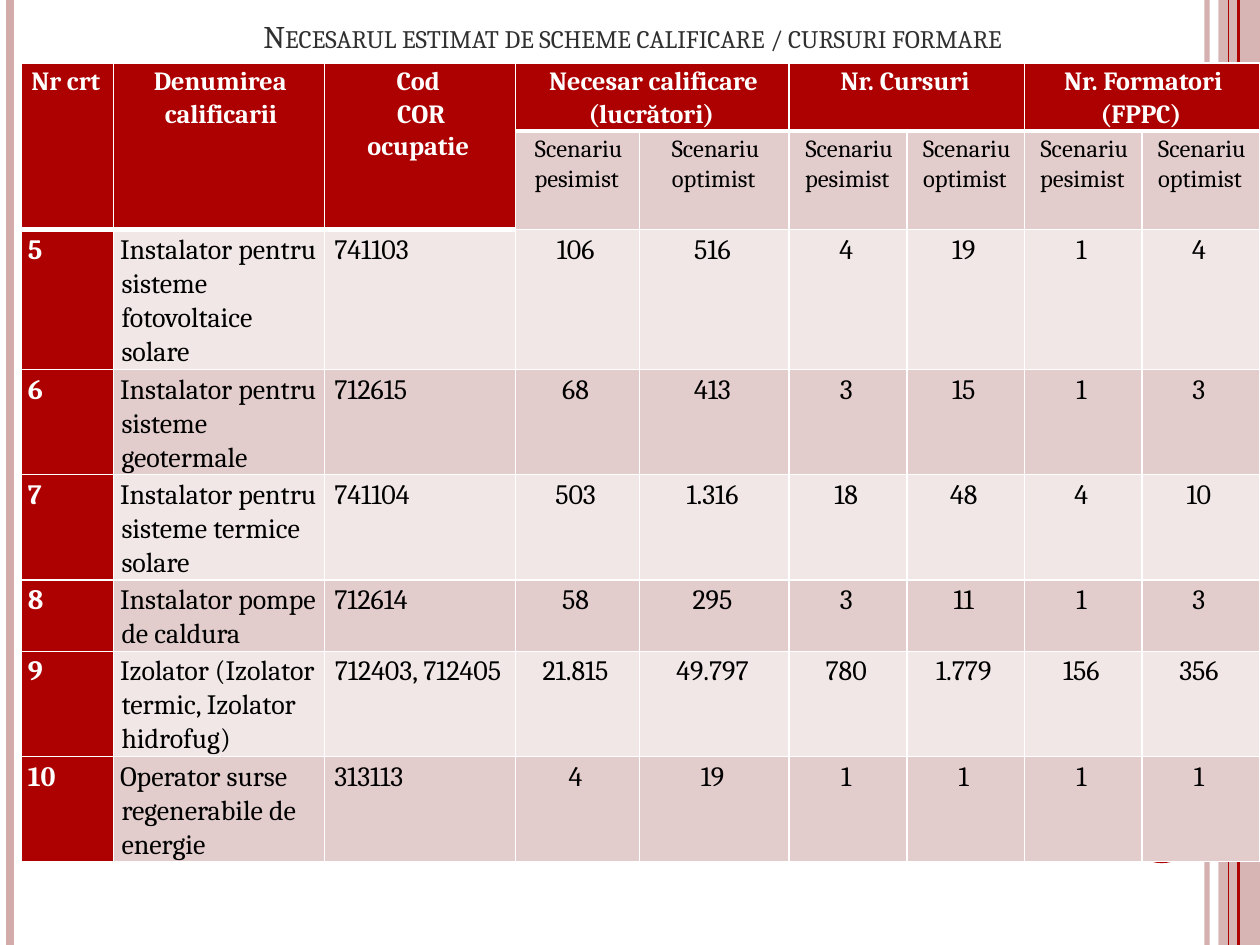
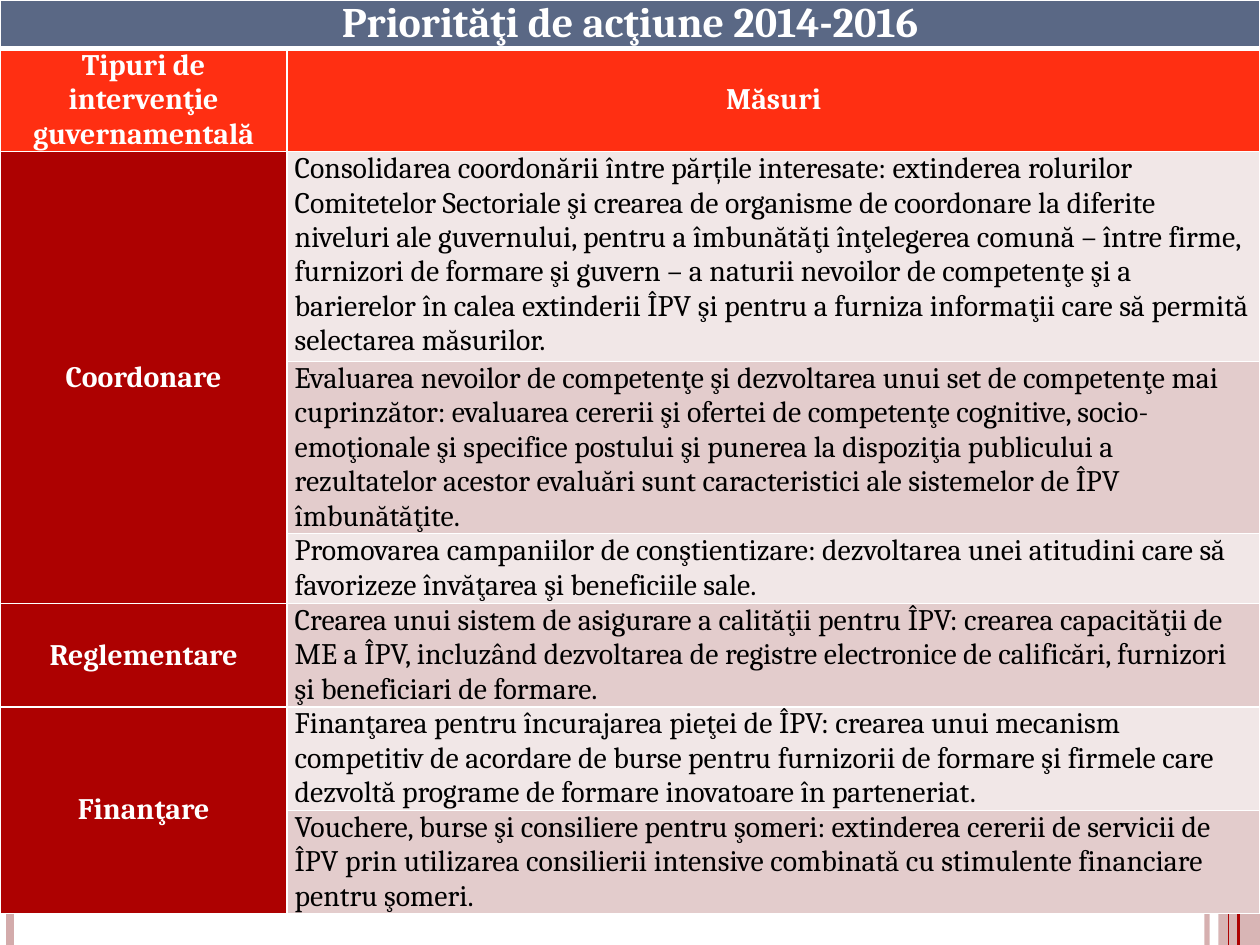
"""Build two slides on training needs and action priorities, each with a table."""
from dataclasses import dataclass, replace

import lxml.etree
import pptx
import pptx.dml.color
import pptx.enum.shapes
import pptx.enum.text
import pptx.oxml
import pptx.oxml.ns
import pptx.slide
import pptx.table
import pptx.util

Cm = pptx.util.Cm
Pt = pptx.util.Pt
qn = pptx.oxml.ns.qn
Align = pptx.enum.text.PP_ALIGN
Anchor = pptx.enum.text.MSO_ANCHOR

FONT = "Cambria"
WIDTH, HEIGHT = 25.4, 19.05
COLOURS = {
    "red": "AD0101",
    "rose": "D3ABAB",
    "band_light": "F1E7E7",
    "band_dark": "E3CCCC",
    "orange": "FF2F12",
    "slate": "5A6885",
    "white": "FFFFFF",
    "black": "000000",
    "title": "303030",
}


@dataclass(frozen=True)
class Stripe:
    x: float
    colour: str
    weight: float
    opacity: int = 100


@dataclass(frozen=True)
class CellStyle:
    fill: str
    colour: str = "black"
    size: float = 16
    bold: bool = False
    align: Align = Align.LEFT
    anchor: Anchor = Anchor.TOP
    indent: float | None = None
    line_spacing: float | None = None


@dataclass(frozen=True)
class CellItem:
    row: int
    column: int
    text: str
    style: CellStyle
    rows: int = 1
    columns: int = 1


@dataclass(frozen=True)
class TableFrame:
    left: float
    top: float
    widths: list[float]
    heights: list[float]
    margins: tuple[float, float, float]
    header_depths: list[int]


STRIPES = [
    Stripe(24.33, "rose", 3, 93),
    Stripe(0.21, "rose", 4.5),
    Stripe(24.97, "red", 1.5),
    Stripe(24.77, "red", 0.75),
]

NEEDS_FRAME = TableFrame(
    0.43, 1.27,
    [1.86, 4.25, 3.85, 2.5, 3.02] + [2.37] * 4,
    [1.37, 1.98, 2.82, 2.12, 2.12, 1.44, 2.12, 2.12],
    (0.13, 0.05, 0.08),
    [2] * 3 + [1] * 6,
)
NEEDS_HEADERS = [
    (0, "Nr crt ", 2, 1),
    (1, "Denumirea calificarii", 2, 1),
    (2, "Cod \nCOR\nocupatie ", 2, 1),
    (3, "Necesar calificare (lucrători) ", 1, 2),
    (5, "Nr. Cursuri ", 1, 2),
    (7, "Nr. Formatori (FPPC) ", 1, 2),
]
NEEDS = [
    ("5", "Instalator pentru sisteme fotovoltaice solare", "741103",
     "106", "516", "4", "19", "1", "4"),
    ("6", "Instalator pentru sisteme geotermale", "712615",
     "68", "413", "3", "15", "1", "3"),
    ("7", "Instalator pentru sisteme termice solare", "741104",
     "503", "1.316", "18", "48", "4", "10"),
    ("8", "Instalator pompe de caldura", "712614",
     "58", "295", "3", "11", "1", "3"),
    ("9", "Izolator (Izolator termic, Izolator hidrofug)", "712403, 712405 ",
     "21.815", "49.797", "780", "1.779", "156", "356"),
    ("10", "Operator surse regenerabile de energie", "313113",
     "4", "19", "1", "1", "1", "1"),
]

PRIORITIES_FRAME = TableFrame(
    0, 0,
    [5.79, 19.61],
    [0.97, 2.08, 4.23, 3.47, 1.41, 2.08, 2.08, 2.08],
    (0.15, 0, 0.15),
    [1, 1],
)
PRIORITIES = [
    ("Coordonare", [
        "Consolidarea coordonării între părțile interesate: extinderea rolurilor "
        "Comitetelor Sectoriale şi crearea de organisme de coordonare la diferite "
        "niveluri ale guvernului, pentru a îmbunătăţi înţelegerea comună – între firme, "
        "furnizori de formare şi guvern – a naturii nevoilor de competenţe şi a "
        "barierelor în calea extinderii ÎPV şi pentru a furniza informaţii care să "
        "permită selectarea măsurilor.",
        "Evaluarea nevoilor de competenţe şi dezvoltarea unui set de competenţe mai "
        "cuprinzător: evaluarea cererii şi ofertei de competenţe cognitive, "
        "socio-emoţionale şi specifice postului şi punerea la dispoziţia publicului a "
        "rezultatelor acestor evaluări sunt caracteristici ale sistemelor de ÎPV "
        "îmbunătăţite.",
        "Promovarea campaniilor de conştientizare: dezvoltarea unei atitudini care să "
        "favorizeze învăţarea şi beneficiile sale.",
    ]),
    ("Reglementare", [
        "Crearea unui sistem de asigurare a calităţii pentru ÎPV: crearea capacităţii de "
        "ME a ÎPV, incluzând dezvoltarea de registre electronice de calificări, furnizori "
        "şi beneficiari de formare.",
    ]),
    ("Finanţare", [
        "Finanţarea pentru încurajarea pieţei de ÎPV: crearea unui mecanism competitiv de "
        "acordare de burse pentru furnizorii de formare şi firmele care dezvoltă programe "
        "de formare inovatoare în parteneriat.",
        "Vouchere, burse şi consiliere pentru şomeri: extinderea cererii de servicii de "
        "ÎPV prin utilizarea consilierii intensive combinată cu stimulente financiare "
        "pentru şomeri.",
    ]),
]


def rgb(name: str) -> pptx.dml.color.RGBColor:
    return pptx.dml.color.RGBColor.from_string(COLOURS[name])


def set_opacity(element: lxml.etree._Element, percent: int) -> None:
    colour = next(element.iter(qn("a:srgbClr")))
    lxml.etree.SubElement(colour, qn("a:alpha"), val=str(percent * 1000))


def style_font(font: pptx.text.text.Font, size: float, colour: str, bold: bool) -> None:
    font.name = FONT
    font.size = Pt(size)
    font.bold = bold
    font.color.rgb = rgb(colour)


def draw_stripe(slide: pptx.slide.Slide, stripe: Stripe) -> None:
    connector = slide.shapes.add_connector(
        pptx.enum.shapes.MSO_CONNECTOR.STRAIGHT,
        Cm(stripe.x), Cm(0), Cm(stripe.x), Cm(HEIGHT))
    connector.line.color.rgb = rgb(stripe.colour)
    connector.line.width = Pt(stripe.weight)
    properties = connector._element.spPr
    if stripe.opacity < 100:
        set_opacity(properties, stripe.opacity)
    lxml.etree.SubElement(properties, qn("a:effectLst"))


def draw_block(slide: pptx.slide.Slide, kind: pptx.enum.shapes.MSO_SHAPE,
               box: tuple[float, float, float, float], colour: str,
               opacity: int = 100) -> None:
    shape = slide.shapes.add_shape(kind, *map(Cm, box))
    shape.shadow.inherit = False
    shape.fill.solid()
    shape.fill.fore_color.rgb = rgb(colour)
    shape.line.fill.background()
    if opacity < 100:
        set_opacity(shape._element.spPr, opacity)


def draw_side_bands(slide: pptx.slide.Slide) -> None:
    kinds = pptx.enum.shapes.MSO_SHAPE
    draw_block(slide, kinds.RECTANGLE, (24.56, 0, 0.84, HEIGHT), "rose", 87)
    for stripe in STRIPES:
        draw_stripe(slide, stripe)
    draw_block(slide, kinds.OVAL, (22.66, 15.88, 1.52, 1.52), "red")


def set_title(slide: pptx.slide.Slide, text: str) -> None:
    title = slide.shapes.title
    title.left, title.top, title.width, title.height = map(Cm, (1.06, 0.1, 23.5, 1.14))
    frame = title.text_frame
    frame.text = text
    frame.auto_size = pptx.enum.text.MSO_AUTO_SIZE.NONE
    frame.vertical_anchor = Anchor.BOTTOM
    paragraph = frame.paragraphs[0]
    paragraph.alignment = Align.CENTER
    for run in paragraph.runs:
        style_font(run.font, 18, "title", False)
        run.font._element.set("cap", "small")


def set_borders(cell: pptx.table._Cell, top: float, bottom: float) -> None:
    properties = cell._tc.get_or_add_tcPr()
    weights = {"a:lnL": 1, "a:lnR": 1, "a:lnT": top, "a:lnB": bottom}
    for index, (tag, weight) in enumerate(weights.items()):
        line = lxml.etree.Element(qn(tag), w=str(Pt(weight)))
        fill = lxml.etree.SubElement(line, qn("a:solidFill"))
        lxml.etree.SubElement(fill, qn("a:srgbClr"), val=COLOURS["white"])
        properties.insert(index, line)


def fill_cell(cell: pptx.table._Cell, text: str, style: CellStyle) -> None:
    cell.fill.solid()
    cell.fill.fore_color.rgb = rgb(style.fill)
    cell.vertical_anchor = style.anchor
    cell.text_frame.text = text
    for paragraph in cell.text_frame.paragraphs:
        paragraph.alignment = style.align
        if style.line_spacing:
            paragraph.line_spacing = style.line_spacing
        if style.indent is not None:
            properties = paragraph._p.get_or_add_pPr()
            properties.set("marL", str(Cm(style.indent)))
            properties.set("indent", str(Cm(-0.03)))
        for run in paragraph.runs:
            style_font(run.font, style.size, style.colour, style.bold)


def draw_table(slide: pptx.slide.Slide, frame: TableFrame, items: list[CellItem]) -> None:
    table = slide.shapes.add_table(
        len(frame.heights), len(frame.widths), Cm(frame.left), Cm(frame.top),
        Cm(sum(frame.widths)), Cm(sum(frame.heights))).table
    for column, width in zip(table.columns, frame.widths):
        column.width = Cm(width)
    for row, height in zip(table.rows, frame.heights):
        row.height = Cm(height)
    for row in range(len(frame.heights)):
        for column, depth in enumerate(frame.header_depths):
            cell = table.cell(row, column)
            cell.margin_left, cell.margin_top, cell.margin_right = map(Cm, frame.margins)
            cell.margin_bottom = Cm(0)
            set_borders(cell, 3 if row == depth else 1, 3 if row < depth else 1)
    for item in items:
        cell = table.cell(item.row, item.column)
        if item.rows * item.columns > 1:
            cell.merge(table.cell(item.row + item.rows - 1, item.column + item.columns - 1))
        fill_cell(cell, item.text, item.style)


def band(index: int) -> str:
    return "band_dark" if index % 2 else "band_light"


def needs_items() -> list[CellItem]:
    header = CellStyle("red", "white", 15, True, Align.CENTER, indent=0.03, line_spacing=1.06)
    scenario = replace(header, fill="band_dark", colour="black", size=14, bold=False)
    items = [CellItem(0, column, text, header, rows, columns)
             for column, text, rows, columns in NEEDS_HEADERS]
    items += [CellItem(1, column, f"Scenariu {'pesimist' if column % 2 else 'optimist'} ", scenario)
              for column in range(3, 9)]
    for index, (number, name, code, *values) in enumerate(NEEDS):
        row = index + 2
        left = CellStyle(band(index), indent=0.03, line_spacing=1.06)
        centred = replace(left, align=Align.CENTER)
        code_style = centred if "," in code else replace(left, indent=0.1)
        items += [
            CellItem(row, 0, number,
                     replace(left, fill="red", colour="white", bold=True, indent=0)),
            CellItem(row, 1, name, left),
            CellItem(row, 2, code, code_style),
        ]
        items += [CellItem(row, column, f"{value} ", centred)
                  for column, value in enumerate(values, 3)]
    return items


def priorities_items() -> list[CellItem]:
    banner = CellStyle("slate", "white", 24, True, Align.CENTER)
    header = replace(banner, fill="orange", size=17)
    group = replace(header, fill="red", anchor=Anchor.MIDDLE)
    items = [
        CellItem(0, 0, "Priorităţi de acţiune 2014-2016", banner, columns=2),
        CellItem(1, 0, "Tipuri de intervenţie guvernamentală", header),
        CellItem(1, 1, "Măsuri", replace(header, anchor=Anchor.MIDDLE)),
    ]
    row = 2
    for name, measures in PRIORITIES:
        items.append(CellItem(row, 0, name, group, rows=len(measures)))
        for measure in measures:
            items.append(CellItem(row, 1, measure, CellStyle(band(row), size=17)))
            row += 1
    return items


def main() -> None:
    presentation = pptx.Presentation()
    presentation.slide_width, presentation.slide_height = Cm(WIDTH), Cm(HEIGHT)
    title_only, blank = presentation.slide_layouts[5], presentation.slide_layouts[6]

    needs_slide = presentation.slides.add_slide(title_only)
    draw_side_bands(needs_slide)
    set_title(needs_slide, "Necesarul estimat de scheme calificare / cursuri formare ")
    draw_table(needs_slide, NEEDS_FRAME, needs_items())

    priorities_slide = presentation.slides.add_slide(blank)
    draw_side_bands(priorities_slide)
    draw_table(priorities_slide, PRIORITIES_FRAME, priorities_items())

    presentation.save("out.pptx")


if __name__ == "__main__":
    main()
